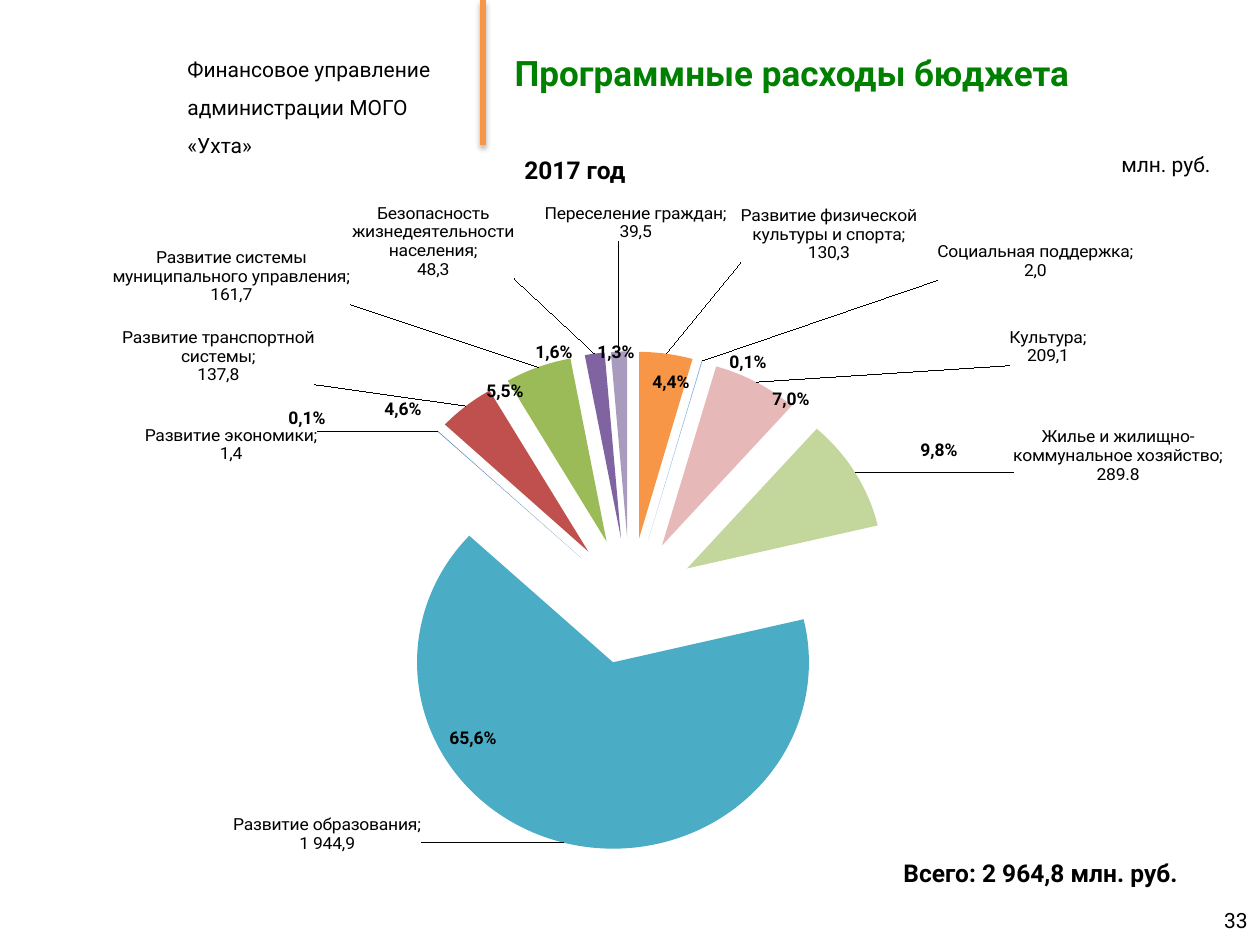
import math

from lxml import etree
from pptx import Presentation
from pptx import util as u
from pptx.chart import data as cd
from pptx.dml.color import RGBColor
from pptx.enum import chart as ch, shapes, text
from pptx.oxml import parse_xml
from pptx.oxml.ns import nsdecls, qn

PX = 914400 // 126
FONT = "Roboto"
BLACK = RGBColor(0, 0, 0)
GREEN = RGBColor(0, 0x80, 0)
ORANGE = RGBColor(0xF7, 0x96, 0x46)

CHART_BOX = (44, 204, 1196, 683)
PIE_CENTER = (630, 600)
PIE_REACH = 250
LABEL_LINE = 19
EXPLOSION = 34

# category, value, value text, colour, label left, top, width, lines
SLICES = [
    ("Развитие физической культуры и спорта", 130.3, "130,3", "F79646", 738, 207, 176, 3),
    ("Социальная поддержка", 2, "2,0", "8EB4E3", 932, 244, 196, 2),
    ("Культура", 209.1, "209,1", "E6B9B8", 1000, 332, 76, 2),
    ("Жилье и жилищно-коммунальное хозяйство", 289.8, None, "C3D69B", 996, 430, 210, 3),
    ("Развитие образования", 1944.9, "1 944,9", "4BACC6", 238, 816, 188, 2),
    ("Развитие экономики", 1.4, "1,4", "4F81BD", 158, 431, 174, 2),
    ("Развитие транспортной системы", 137.8, "137,8", "C0504D", 134, 331, 193, 3),
    ("Развитие системы муниципального управления", 161.7, "161,7", "9BBB59", 119, 250, 238, 3),
    ("Безопасность жизнедеятельности населения", 48.3, "48,3", "8064A2", 354, 205, 163, 4),
    ("Переселение граждан", 39.5, "39,5", "A99BBD", 545, 204, 183, 2),
]

SHARES = [
    ("65,6%", 437, 721), ("4,4%", 640, 365), ("5,5%", 474, 374), ("0,1%", 717, 345),
    ("7,0%", 760, 382), ("0,1%", 276, 401), ("9,8%", 908, 433), ("4,6%", 372, 392),
    ("1,6%", 523, 335), ("1,3%", 585, 335),
]


def box(*lengths):
    return [n * PX for n in lengths]


def set_font(font, size, color=BLACK, bold=False):
    font.name, font.size, font.bold = FONT, u.Pt(size), bold
    font.color.rgb = color


def fill_text(tf, content, size, color=BLACK, bold=False, align=text.PP_ALIGN.LEFT, spacing=None):
    tf.text = content
    for p in tf.paragraphs:
        p.alignment = align
        if spacing:
            p.line_spacing = spacing
        for r in p.runs:
            set_font(r.font, size, color, bold)


def add_text(s, content, bounds, size, wrap=False, anchor=text.MSO_ANCHOR.TOP, **style):
    tf = s.shapes.add_textbox(*box(*bounds)).text_frame
    tf.word_wrap = wrap
    tf.vertical_anchor = anchor
    fill_text(tf, content, size, **style)


def add_title(s, content):
    sp = s.shapes.title
    sp.left, sp.top, sp.width, sp.height = box(502, 0, 758, 145)
    sp.text_frame.vertical_anchor = text.MSO_ANCHOR.MIDDLE
    fill_text(sp.text_frame, content, 20, GREEN, True)


def add_divider(s):
    line = s.shapes.add_connector(shapes.MSO_CONNECTOR.STRAIGHT, *box(483, 0, 483, 145))
    line.line.color.rgb = ORANGE
    line.line.width = u.Pt(3)
    line._element.spPr.append(parse_xml(
        f'<a:effectLst {nsdecls("a")}><a:outerShdw blurRad="39370" dist="22860" dir="5400000" '
        'rotWithShape="0"><a:srgbClr val="000000"><a:alpha val="35000"/></a:srgbClr>'
        '</a:outerShdw></a:effectLst>'))


def manual_layout(**values):
    layout = parse_xml(f'<c:layout {nsdecls("c")}><c:manualLayout/></c:layout>')
    for name, value in values.items():
        etree.SubElement(layout[0], qn(f"c:{name}")).set("val", str(value))
    return layout


def label_offset(angle, left, top, width, lines):
    sin, cos = math.sin(angle), math.cos(angle)
    x = PIE_CENTER[0] + PIE_REACH * sin
    y = PIE_CENTER[1] - PIE_REACH * cos
    if abs(sin) < math.sin(math.radians(5)):
        x -= width / 2
    elif sin < 0:
        x -= width
    if cos > 0:
        y -= lines * LABEL_LINE
    return round((left - x) / CHART_BOX[2], 4), round((top - y) / CHART_BOX[3], 4)


def format_label(label, category, value_text):
    if value_text:
        fill_text(label.text_frame, f"{category};\n{value_text}", 10, align=text.PP_ALIGN.CENTER)
    else:
        set_font(label.font, 10)
    label.position = ch.XL_LABEL_POSITION.OUTSIDE_END


def format_slices(ser):
    total = sum(row[1] for row in SLICES)
    start = 0
    for i, (category, value, value_text, color, *bounds) in enumerate(SLICES):
        point = ser.points[i]
        point.format.fill.solid()
        point.format.fill.fore_color.rgb = RGBColor.from_string(color)
        format_label(point.data_label, category, value_text)
        angle = 2 * math.pi * (start + value / 2) / total
        start += value
        x, y = label_offset(angle, *bounds)
        d_lbl = ser._element.xpath(f'c:dLbls/c:dLbl[c:idx/@val="{i}"]')[0]
        d_lbl.insert(1, manual_layout(x=x, y=y))
        d_lbl.find(qn("c:showCatName")).set("val", "1")
        sep = etree.SubElement(d_lbl, qn("c:separator"))
        sep.text = "; "


def explode(ser):
    points = ser._element.xpath("c:dPt")
    for target in [points[0]] + [p.find(qn("c:spPr")) for p in points]:
        target.addprevious(parse_xml(f'<c:explosion {nsdecls("c")} val="{EXPLOSION}"/>'))


def add_pie(s):
    data = cd.CategoryChartData(number_format="#,##0.0")
    data.categories = [row[0] for row in SLICES]
    data.add_series("Series 1", [row[1] for row in SLICES])
    chart = s.shapes.add_chart(ch.XL_CHART_TYPE.PIE, *box(*CHART_BOX), data).chart
    chart.has_title = chart.has_legend = False
    set_font(chart.font, 18)
    plot = chart.plots[0]
    plot.vary_by_categories = True
    ser = plot.series[0]
    labels = ser.data_labels
    labels.show_value = labels.show_category_name = True
    labels.number_format, labels.number_format_is_linked = "#,##0.0", False
    labels.position = ch.XL_LABEL_POSITION.OUTSIDE_END
    set_font(labels.font, 10)
    format_slices(ser)
    explode(ser)
    area = chart._chartSpace.xpath("c:chart/c:plotArea")[0]
    for old in area.findall(qn("c:layout")):
        area.remove(old)
    area.insert(0, manual_layout(layoutTarget="inner", xMode="edge", yMode="edge",
                                 x=0.091, y=0.227, w=0.798, h=0.769))


def main():
    prs = Presentation()
    prs.slide_width, prs.slide_height = u.Inches(10), u.Inches(7.5)
    s = prs.slides.add_slide(prs.slide_layouts[5])
    add_text(s, "Финансовое управление\nадминистрации МОГО «Ухта»", (175, 38, 290, 83), 12,
             wrap=True, spacing=1.5)
    add_divider(s)
    add_title(s, "Программные расходы бюджета")
    add_pie(s)
    for share, left, top in SHARES:
        add_text(s, share, (left, top, 74, 34), 10, bold=True)
    add_text(s, "млн. руб.", (1108, 145, 116, 38), 12, align=text.PP_ALIGN.CENTER)
    add_text(s, "2017 год", (512, 149, 139, 43), 14, bold=True)
    add_text(s, "Всего: 2 964,8 млн. руб.", (891, 852, 334, 43), 14, bold=True)
    add_text(s, "33", (966, 895, 294, 50), 12, wrap=True, anchor=text.MSO_ANCHOR.MIDDLE,
             align=text.PP_ALIGN.RIGHT)
    prs.save("out.pptx")


if __name__ == "__main__":
    main()
